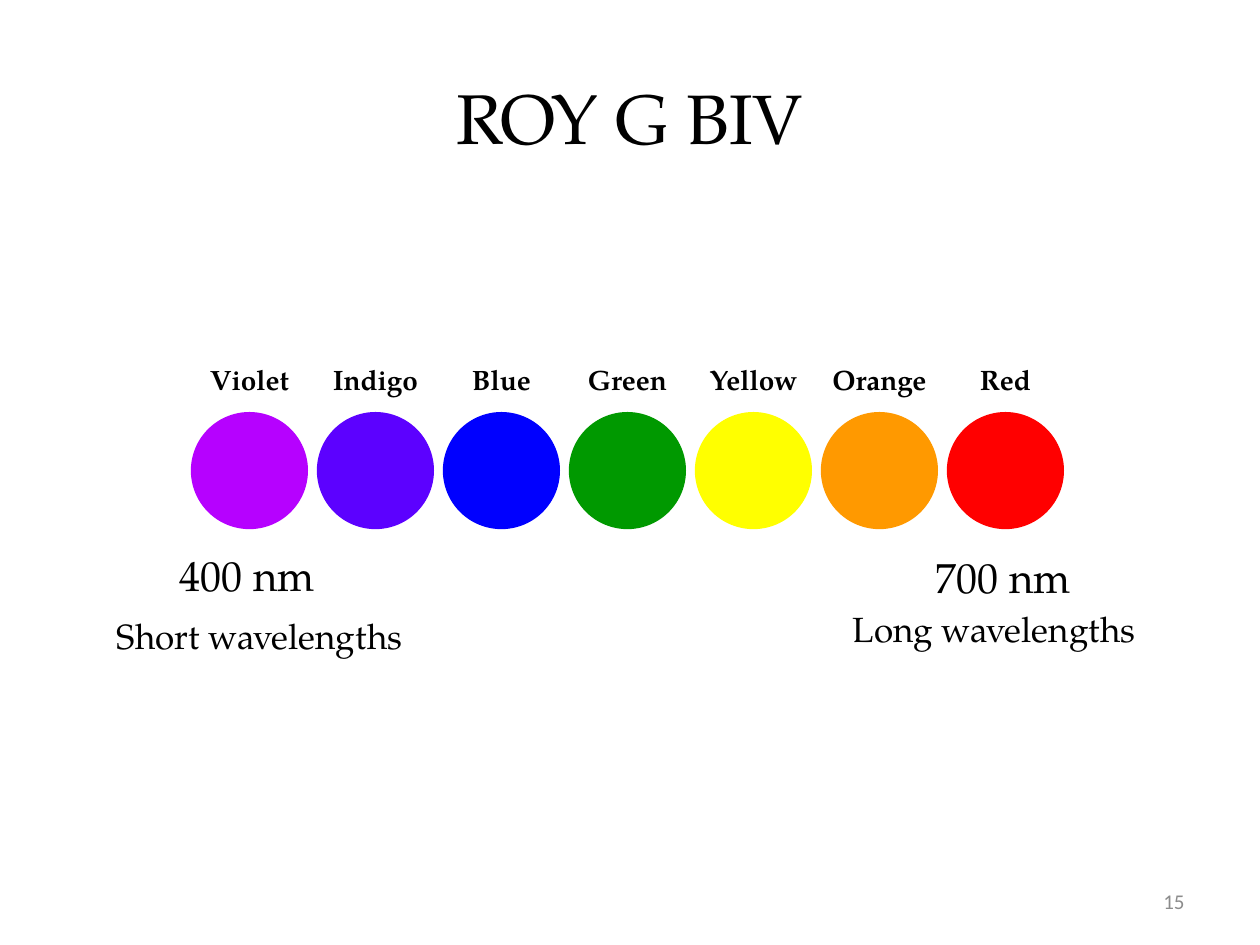
from pptx import Presentation
from pptx.dml.color import RGBColor
from pptx.enum.shapes import MSO_SHAPE
from pptx.enum.text import MSO_ANCHOR, PP_ALIGN
from pptx.util import Inches, Pt

ELLIPSE = MSO_SHAPE.OVAL
TOP, MIDDLE = MSO_ANCHOR.TOP, MSO_ANCHOR.MIDDLE
LEFT, CENTER, RIGHT = PP_ALIGN.LEFT, PP_ALIGN.CENTER, PP_ALIGN.RIGHT

WIDTH, HEIGHT = 10, 7.5
SERIF, SANS = "TeX Gyre Pagella", "Calibri"
BLACK, GRAY = "000000", "8C8C8C"
DIAMETER = 0.93
SPECTRUM = [
    ("Violet", "B601FF"),
    ("Indigo", "5C01FF"),
    ("Blue", "0000FF"),
    ("Green", "009900"),
    ("Yellow", "FFFF00"),
    ("Orange", "FF9900"),
    ("Red", "FF0000"),
]


def color(value):
    return RGBColor.from_string(value)


def add_text(page, box, text, size, align=LEFT, anchor=TOP, font=SERIF,
             ink=BLACK, bold=False, wrap=True):
    frame = page.shapes.add_textbox(*map(Inches, box)).text_frame
    frame.text = text
    frame.word_wrap = wrap
    frame.vertical_anchor = anchor
    para = frame.paragraphs[0]
    para.alignment = align
    span = para.runs[0]
    span.font.name = font
    span.font.size = Pt(size)
    span.font.bold = bold
    span.font.color.rgb = color(ink)


def add_title(page, box):
    add_text(page, box, "ROY G BIV", 40, CENTER, MIDDLE)


def add_spectrum(page, box):
    left, top, width, height = box
    column = width / len(SPECTRUM)
    inset = (column - DIAMETER) / 2
    for index, (name, fill) in enumerate(SPECTRUM):
        x = left + index * column
        circle = page.shapes.add_shape(
            ELLIPSE, Inches(x + inset), Inches(top + height - DIAMETER),
            Inches(DIAMETER), Inches(DIAMETER))
        circle.shadow.inherit = False
        circle.fill.solid()
        circle.fill.fore_color.rgb = color(fill)
        circle.line.fill.background()
        add_text(page, (x, top, column, 0.37), name, 16, CENTER, bold=True)


def add_range_end(page, value_box, value, caption_box, caption):
    add_text(page, value_box, value, 24, wrap=False)
    add_text(page, caption_box, caption, 20, wrap=False)


def add_page_number(page, box):
    add_text(page, box, "15", 12, RIGHT, MIDDLE, SANS, GRAY)


def main():
    deck = Presentation()
    deck.slide_width, deck.slide_height = Inches(WIDTH), Inches(HEIGHT)
    page = deck.slides.add_slide(deck.slide_layouts[6])
    add_title(page, (0.05 * WIDTH, 0.04 * HEIGHT, 0.9 * WIDTH, 1.25))
    add_spectrum(page, (1.48, 2.83, 0.7 * WIDTH, 1.37))
    add_range_end(page, (1.33, 4.31, 1.27, 0.5), "400 nm",
                  (0.83, 4.83, 2.49, 0.43), "Short wavelengths")
    add_range_end(page, (7.33, 4.33, 1.27, 0.5), "700 nm",
                  (6.67, 4.77, 2.47, 0.43), "Long wavelengths")
    add_page_number(page, (7.17, 6.95, 2.33, 0.4))
    deck.save("out.pptx")


if __name__ == "__main__":
    main()
